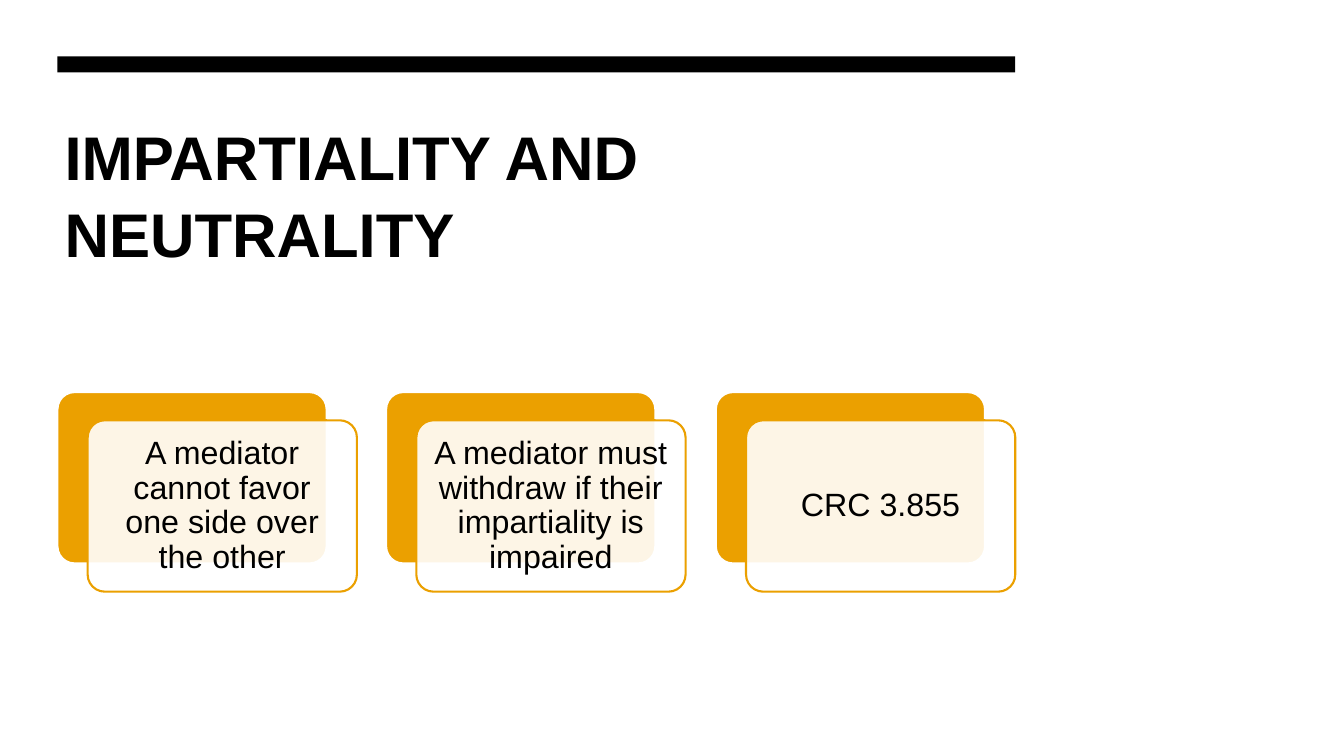
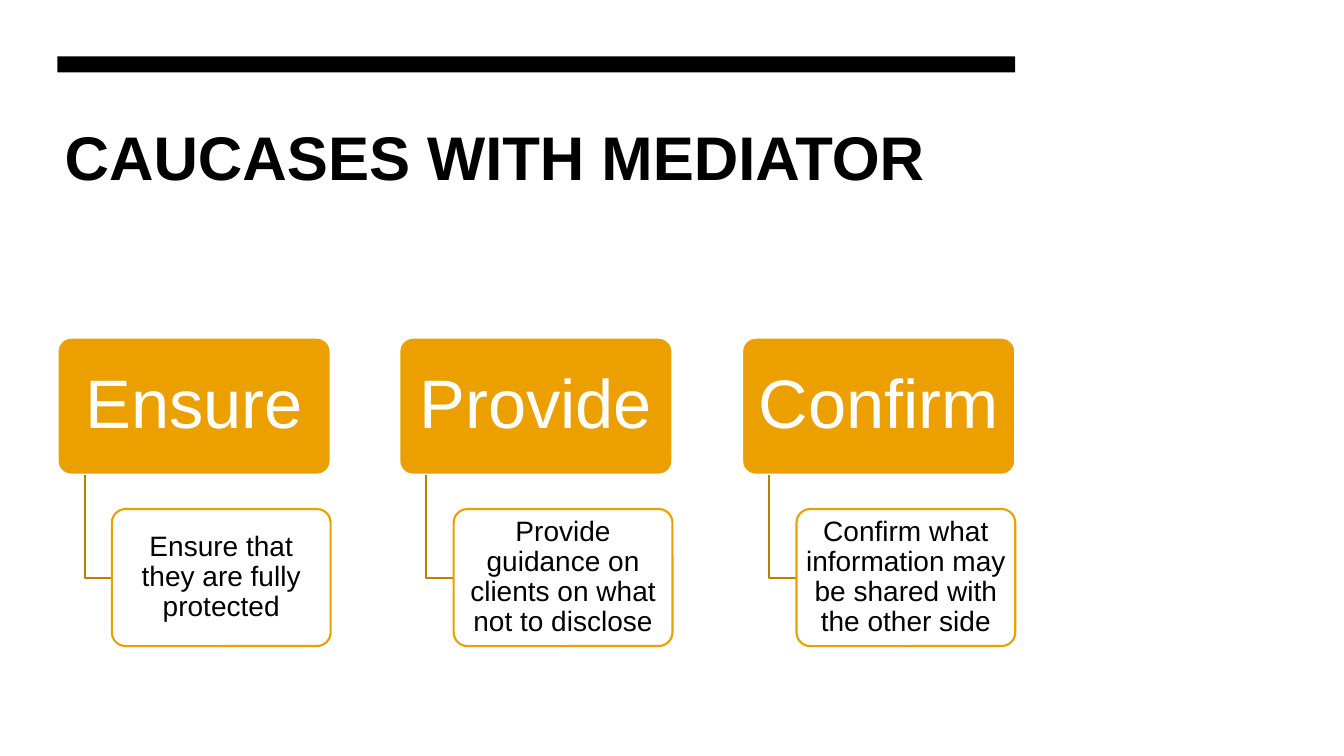
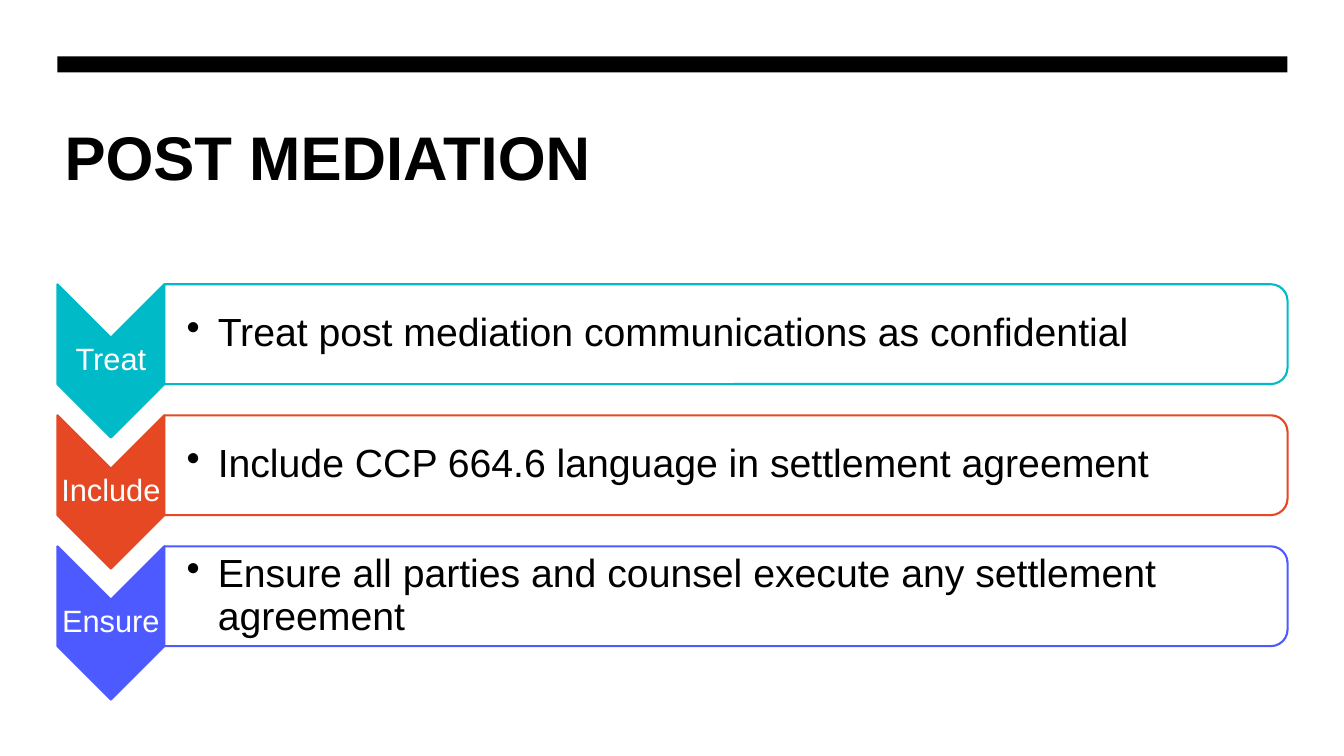
from typing import NamedTuple, Optional

from lxml.etree import SubElement
from pptx import Presentation
from pptx.dml.color import RGBColor
from pptx.enum.shapes import MSO_SHAPE
from pptx.enum.text import MSO_ANCHOR, MSO_AUTO_SIZE, PP_ALIGN
from pptx.oxml.ns import qn
from pptx.util import Emu, Pt

# Shared measures, in px of 1/100 inch
EMU_PER_PX = 9144
SLIDE_WIDTH, SLIDE_HEIGHT = 1333, 750
LEFT = 57
NARROW_WIDTH, WIDE_WIDTH = 950, 1220
TITLE_ONLY_LAYOUT = 5

# Shared style
FONT = "Arial"
BLACK, WHITE = "000000", "FFFFFF"
AMBER, DARK_AMBER = "EBA000", "BC8000"
TEAL, RED, BLUE = "00BAC8", "E64823", "4D5AFF"
LINE_WIDTH = 1.5
CORNER = 0.1
PANEL_OPACITY = 90


class Box(NamedTuple):
    left: float
    top: float
    width: float
    height: float


class Insets(NamedTuple):
    left: int
    top: int
    right: int
    bottom: int


class TextStyle(NamedTuple):
    size: int
    color: str
    insets: Insets
    bullet_indent: int = 0


class Topic(NamedTuple):
    heading: str
    detail: str


class Step(NamedTuple):
    label: str
    detail: str
    color: str


CARD_TEXT = TextStyle(23, BLACK, Insets(10, 10, 10, 10))
HEADING_TEXT = TextStyle(49, WHITE, Insets(10, 7, 10, 7))
DETAIL_TEXT = TextStyle(20, BLACK, Insets(4, 3, 4, 3))
LABEL_TEXT = TextStyle(22, WHITE, Insets(2, 2, 2, 2))
BULLET_TEXT = TextStyle(28, BLACK, Insets(22, 2, 2, 2), bullet_indent=31)

CARDS = [
    "A mediator cannot favor one side over the other",
    "A mediator must withdraw if their impartiality is impaired",
    "CRC 3.855",
]
TOPICS = [
    Topic("Ensure", "Ensure that they are fully protected"),
    Topic("Provide", "Provide guidance on clients on what not to disclose"),
    Topic("Confirm", "Confirm what information may be shared with the other side"),
]
STEPS = [
    Step("Treat", "Treat post mediation communications as confidential", TEAL),
    Step("Include", "Include CCP 664.6 language in settlement agreement", RED),
    Step("Ensure", "Ensure all parties and counsel execute any settlement agreement", BLUE),
]


# Helpers
def px(value: float) -> Emu:
    return Emu(round(value * EMU_PER_PX))


def color_of(value: str) -> RGBColor:
    return RGBColor.from_string(value)


def place(box: Box) -> list[Emu]:
    return [px(value) for value in box]


def column_lefts(count: int, width: int) -> list[int]:
    """Spread columns of one width evenly over the narrow content area."""
    return [LEFT + (NARROW_WIDTH - width) * index // (count - 1) for index in range(count)]


def set_insets(text_frame, insets: Insets) -> None:
    text_frame.margin_left = px(insets.left)
    text_frame.margin_top = px(insets.top)
    text_frame.margin_right = px(insets.right)
    text_frame.margin_bottom = px(insets.bottom)
    text_frame.word_wrap = True
    text_frame.auto_size = MSO_AUTO_SIZE.NONE


def add_run(paragraph, text: str, size: int, color: str, bold: bool = False) -> None:
    run = paragraph.add_run()
    run.text = text
    run.font.name = FONT
    run.font.size = Pt(size)
    run.font.bold = bold
    run.font.color.rgb = color_of(color)


def write(shape, text: str, style: TextStyle) -> None:
    text_frame = shape.text_frame
    set_insets(text_frame, style.insets)
    text_frame.vertical_anchor = MSO_ANCHOR.MIDDLE
    paragraph = text_frame.paragraphs[0]
    paragraph.alignment = PP_ALIGN.CENTER
    if style.bullet_indent:
        paragraph.alignment = PP_ALIGN.LEFT
        properties = paragraph._p.get_or_add_pPr()
        properties.set("marL", str(px(style.bullet_indent)))
        properties.set("indent", str(px(-style.bullet_indent)))
        SubElement(properties, qn("a:buChar")).set("char", "•")
    paragraph.line_spacing = 0.9
    add_run(paragraph, text, style.size, style.color)


def add_text(slide, box: Box, text: str, style: TextStyle) -> None:
    write(slide.shapes.add_textbox(*place(box)), text, style)


def add_filled(slide, kind, box: Box, fill: str, line: Optional[str] = None, opacity: int = 100):
    shape = slide.shapes.add_shape(kind, *place(box))
    shape.shadow.inherit = False
    shape.fill.solid()
    shape.fill.fore_color.rgb = color_of(fill)
    if opacity < 100:
        fill_color = shape.element.spPr.find(qn("a:solidFill")).find(qn("a:srgbClr"))
        SubElement(fill_color, qn("a:alpha")).set("val", str(opacity * 1000))
    if line:
        shape.line.color.rgb = color_of(line)
        shape.line.width = Pt(LINE_WIDTH)
    else:
        shape.line.fill.background()
    return shape


def add_rounded(slide, box: Box, fill: str, line: str, opacity: int = 100):
    shape = add_filled(slide, MSO_SHAPE.ROUNDED_RECTANGLE, box, fill, line, opacity)
    shape.adjustments[0] = CORNER
    return shape


def add_quarter_turned(slide, kind, seen: Box, fill: str, line: str, opacity: int = 100) -> None:
    """Draw a shape turned by 90 degrees so that it covers the box as seen."""
    shift = (seen.width - seen.height) / 2
    box = Box(seen.left + shift, seen.top - shift, seen.height, seen.width)
    add_filled(slide, kind, box, fill, line, opacity).rotation = 90


def add_bent_line(slide, left: int, top: int, width: int, height: int) -> None:
    builder = slide.shapes.build_freeform(px(left), px(top))
    corner, end = (px(left), px(top + height)), (px(left + width), px(top + height))
    builder.add_line_segments([corner, end], close=False)
    shape = builder.convert_to_shape()
    shape.shadow.inherit = False
    shape.fill.background()
    shape.line.color.rgb = color_of(DARK_AMBER)
    shape.line.width = Pt(LINE_WIDTH)


def add_titled_slide(presentation, title: str, width: int):
    slide = presentation.slides.add_slide(presentation.slide_layouts[TITLE_ONLY_LAYOUT])
    slide.background.fill.solid()
    slide.background.fill.fore_color.rgb = color_of(WHITE)
    shape = slide.shapes.title
    shape.left, shape.top, shape.width, shape.height = place(Box(LEFT, 107, width, 160))
    set_insets(shape.text_frame, Insets(7, 7, 7, 7))
    shape.text_frame.vertical_anchor = MSO_ANCHOR.TOP
    paragraph = shape.text_frame.paragraphs[0]
    paragraph.alignment = PP_ALIGN.LEFT
    paragraph.line_spacing = 1.05
    add_run(paragraph, title, 44, BLACK, bold=True)
    add_filled(slide, MSO_SHAPE.RECTANGLE, Box(LEFT, 56, width, 16), BLACK)
    return slide


# Slides
def build_impartiality(presentation) -> None:
    slide = add_titled_slide(presentation, "IMPARTIALITY AND NEUTRALITY", NARROW_WIDTH)
    width, height, shift_right, shift_down = 267, 170, 30, 28
    top = 389
    for left, text in zip(column_lefts(len(CARDS), width + shift_right), CARDS):
        add_rounded(slide, Box(left, top, width, height), AMBER, WHITE)
        front = Box(left + shift_right, top + shift_down, width, height)
        write(add_rounded(slide, front, WHITE, AMBER, PANEL_OPACITY), text, CARD_TEXT)


def build_caucuses(presentation) -> None:
    slide = add_titled_slide(presentation, "CAUCASES WITH MEDIATOR", NARROW_WIDTH)
    width, height, indent = 271, 136, 27
    top, detail_top = 335, 505
    bottom = top + height
    for left, topic in zip(column_lefts(len(TOPICS), width), TOPICS):
        heading = add_rounded(slide, Box(left, top, width, height), AMBER, WHITE)
        write(heading, topic.heading, HEADING_TEXT)
        add_bent_line(slide, left + indent, bottom, indent, detail_top + height // 2 - bottom)
        detail_box = Box(left + 2 * indent, detail_top, width - 2 * indent, height)
        detail = add_rounded(slide, detail_box, WHITE, AMBER, PANEL_OPACITY)
        write(detail, topic.detail, DETAIL_TEXT)


def build_post_mediation(presentation) -> None:
    slide = add_titled_slide(presentation, "POST MEDIATION", WIDE_WIDTH)
    first_top, pitch = 282, 130
    arrow_width, arrow_height, label_height = 106, 152, 46
    panel_left, panel_width, panel_height = LEFT + arrow_width, 1114, 99
    for index, step in enumerate(STEPS):
        top = first_top + index * pitch
        arrow = Box(LEFT, top, arrow_width, arrow_height)
        add_quarter_turned(slide, MSO_SHAPE.CHEVRON, arrow, step.color, step.color)
        label_top = top + (arrow_height - label_height) // 2
        add_text(slide, Box(LEFT, label_top, arrow_width, label_height), step.label, LABEL_TEXT)
        panel = Box(panel_left, top, panel_width, panel_height)
        add_quarter_turned(
            slide, MSO_SHAPE.ROUND_2_SAME_RECTANGLE, panel, WHITE, step.color, PANEL_OPACITY
        )
        text_box = Box(panel_left, top + 5, panel_width - 5, panel_height - 10)
        add_text(slide, text_box, step.detail, BULLET_TEXT)


def main() -> None:
    presentation = Presentation()
    presentation.slide_width = px(SLIDE_WIDTH)
    presentation.slide_height = px(SLIDE_HEIGHT)
    build_impartiality(presentation)
    build_caucuses(presentation)
    build_post_mediation(presentation)
    presentation.save("out.pptx")


if __name__ == "__main__":
    main()
